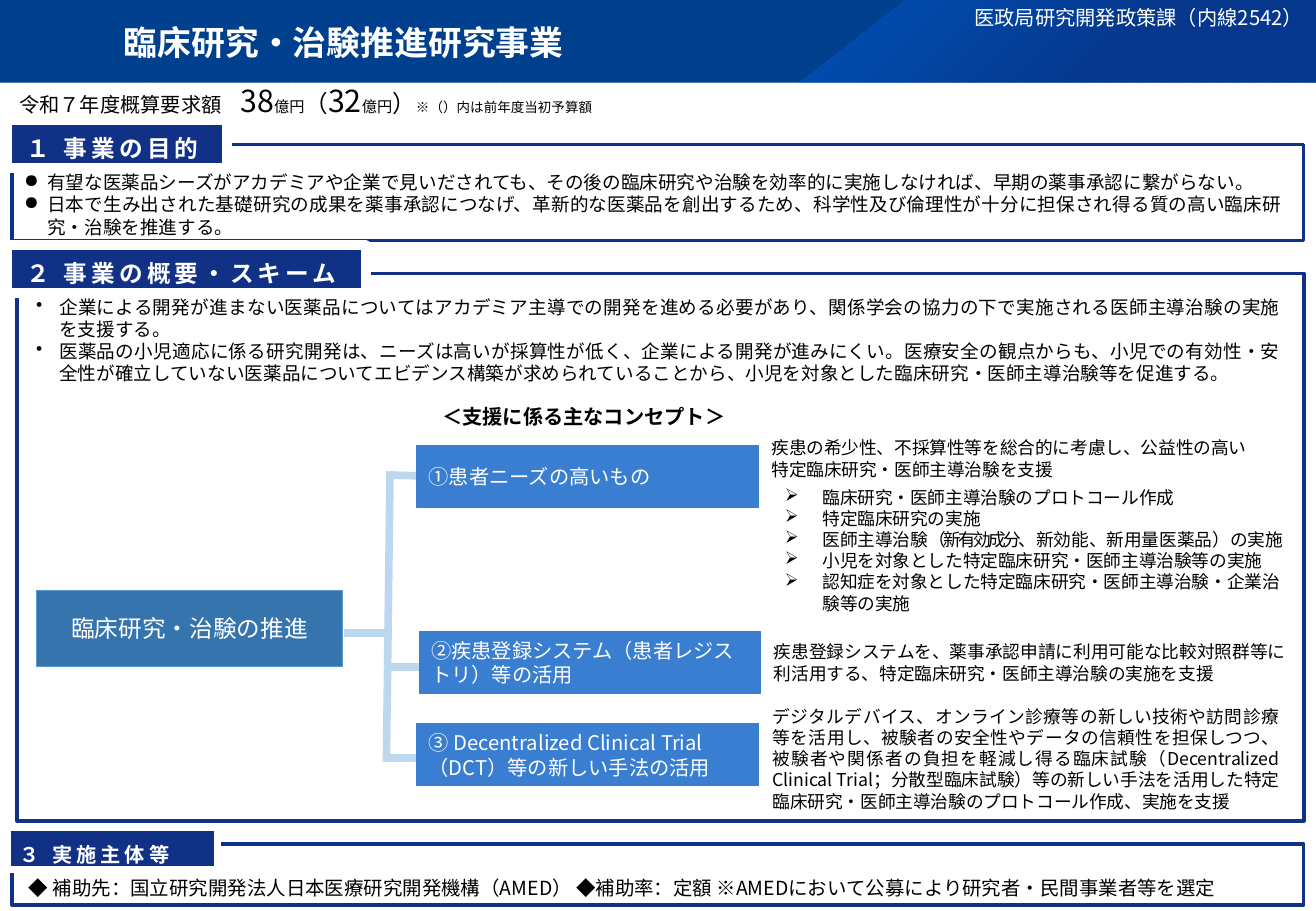
from lxml import etree
from pptx import Presentation
from pptx.dml.color import RGBColor
from pptx.enum.dml import MSO_PATTERN
from pptx.enum.shapes import MSO_CONNECTOR, MSO_SHAPE
from pptx.enum.text import MSO_ANCHOR as Anchor, MSO_AUTO_SIZE as AutoSize, PP_ALIGN as Align
from pptx.oxml import parse_xml
from pptx.oxml.ns import nsdecls, qn
from pptx.util import Inches, Pt

FONT = "Noto Sans CJK JP"
COLORS = {
    "white": "FFFFFF", "black": "000000", "navy": "103185",
    "band": "004292", "stripe": "003579", "glow": "0064DF", "deep": "0C338E",
    "goal": "3674AD", "goal_line": "5B9BD5", "concept": "397ED1", "branch": "BDD7EE",
}
TITLE = "臨床研究・治験推進研究事業"
DIVISION = "医政局研究開発政策課（内線2542）"
BUDGET = [
    ("令和７年度概算要求額", 12, 0), ("　", 11, 0), ("38", 18, 0), ("億円", 9, 0),
    ("（", 14, 0), ("32", 18, 0), ("億円", 9, 0), ("）", 14, 0),
    ("※", 8, -3), ("（", 8, 0), ("）", 8, -2.8), ("内は前年度当初予算額", 8, 0),
]
SECTIONS = [
    ("１ 事業の目的", (0.06, 0.99, 1.81, 0.39), (0.1, 1.19, 10.63, 0.79), 14, "Cabin", 6, (0.16, 0.04, 0.1, 0.04)),
    ("２ 事業の概要・スキーム", (0.06, 2.02, 2.95, 0.39), (0.14, 2.25, 10.59, 4.51), 14, "Cabin", 6, (0.16, 0.04, 0.1, 0.04)),
    ("３ 実施主体等", (0.06, 6.81, 1.73, 0.35), (0.1, 6.95, 10.63, 0.5), 12, FONT, 4.5, (0.1, 0.08, 0.1, 0.05)),
]
PURPOSE = [
    "有望な医薬品シーズがアカデミアや企業で見いだされても、その後の臨床研究や治験を効率的に実施しなければ、早期の薬事承認に繋がらない。",
    "日本で生み出された基礎研究の成果を薬事承認につなげ、革新的な医薬品を創出するため、科学性及び倫理性が十分に担保され得る質の高い臨床研究・治験を推進する。",
]
OUTLINE = [
    "企業による開発が進まない医薬品についてはアカデミア主導での開発を進める必要があり、関係学会の協力の下で実施される医師主導治験の実施を支援する。",
    "医薬品の小児適応に係る研究開発は、ニーズは高いが採算性が低く、企業による開発が進みにくい。医療安全の観点からも、小児での有効性・安全性が確立していない医薬品についてエビデンス構築が求められていることから、小児を対象とした臨床研究・医師主導治験等を促進する。",
]
ORGANIZATION = "◆ 補助先：国立研究開発法人日本医療研究開発機構（AMED） ◆補助率：定額 ※AMEDにおいて公募により研究者・民間事業者等を選定"
CONCEPT_HEADING = "＜支援に係る主なコンセプト＞"
GOAL = "臨床研究・治験の推進"
CONCEPTS = [
    ("①患者ニーズの高いもの", (3.43, 3.67)),
    ("②疾患登録システム（患者レジストリ）等の活用", (3.45, 5.2)),
    ("③ Decentralized Clinical Trial（DCT）等の新しい手法の活用", (3.43, 5.96)),
]
NEEDS = ["疾患の希少性、不採算性等を総合的に考慮し、公益性の高い", "特定臨床研究・医師主導治験を支援"]
NEEDS_ITEMS = [
    "臨床研究・医師主導治験のプロトコール作成",
    "特定臨床研究の実施",
    [("医師主導治験", 10.5, 0), ("（新有効成分、", 10.5, -1.5), ("新効能、新用量医薬品", 10.5, 0),
     ("）", 10.5, -1.5), ("の実施", 10.5, 0)],
    "小児を対象とした特定臨床研究・医師主導治験等の実施",
    "認知症を対象とした特定臨床研究・医師主導治験・企業治験等の実施",
]
REGISTRY = "疾患登録システムを、薬事承認申請に利用可能な比較対照群等に利活用する、特定臨床研究・医師主導治験の実施を支援"
NEW_METHODS = "デジタルデバイス、オンライン診療等の新しい技術や訪問診療等を活用し、被験者の安全性やデータの信頼性を担保しつつ、被験者や関係者の負担を軽減し得る臨床試験（Decentralized Clinical Trial；分散型臨床試験）等の新しい手法を活用した特定臨床研究・医師主導治験のプロトコール作成、実施を支援"
BRANCHES = [
    (3.5, 3.92, 3.21, 3.91), (3.21, 5.21, 2.83, 5.21), (3.18, 6.27, 3.21, 3.88),
    (3.5, 6.24, 3.16, 6.24), (3.45, 5.49, 3.18, 5.49),
]


def rgb(name):
    return RGBColor.from_string(COLORS[name])


def inches(values):
    return [Inches(value) for value in values]


def set_font(font, size, color, bold=False, spacing=0, name=FONT):
    font.name, font.size, font.bold = name, Pt(size), bold
    etree.SubElement(font._rPr, qn("a:ea")).set("typeface", FONT)
    font.color.rgb = rgb(color)
    if spacing:
        font._rPr.set("spc", str(int(spacing * 100)))


def write(frame, lines, size, color="black", align=Align.LEFT, bullet=None, indent=(0.19, -0.19), **style):
    written = []
    for line in lines:
        paragraph = frame.add_paragraph() if frame.text else frame.paragraphs[0]
        paragraph.alignment = align
        if bullet:
            properties = paragraph._p.get_or_add_pPr()
            properties.set("marL", str(Inches(indent[0])))
            properties.set("indent", str(Inches(indent[1])))
            etree.SubElement(properties, qn("a:buChar")).set("char", bullet)
        if isinstance(line, str):
            paragraph.add_run().text = line
            set_font(paragraph.font, size, color, **style)
        else:
            for text, run_size, spacing in line:
                run = paragraph.add_run()
                run.text = text
                set_font(run.font, run_size, color, spacing=spacing)
        written.append(paragraph)
    return written


def set_margins(frame, margins):
    frame.margin_left, frame.margin_top, frame.margin_right, frame.margin_bottom = inches(margins)


def add_text(slide, box, lines, size, anchor=Anchor.TOP, **style):
    frame = slide.shapes.add_textbox(*inches(box)).text_frame
    frame.word_wrap, frame.vertical_anchor = True, anchor
    write(frame, lines, size, **style)
    return frame


def add_box(slide, box, fill=None, line=None, width=0.5):
    shape = slide.shapes.add_shape(MSO_SHAPE.RECTANGLE, *inches(box))
    shape.shadow.inherit = False
    if fill:
        shape.fill.solid()
        shape.fill.fore_color.rgb = rgb(fill)
    else:
        shape.fill.background()
    if line:
        shape.line.color.rgb = rgb(line)
        shape.line.width = Pt(width)
    else:
        shape.line.fill.background()
    shape.text_frame.word_wrap = True
    return shape


def add_header(slide):
    band = add_box(slide, (-0.01, -0.03, 10.85, 0.71))
    band.fill.patterned()
    band.fill.pattern = MSO_PATTERN.DARK_UPWARD_DIAGONAL
    band.fill.fore_color.rgb, band.fill.back_color.rgb = rgb("stripe"), rgb("band")

    builder = slide.shapes.build_freeform(Inches(7.48), Inches(-0.03))
    builder.add_line_segments([inches(point) for point in [(10.84, -0.03), (10.84, 0.68), (6.57, 0.68)]])
    wedge = builder.convert_to_shape()
    wedge.shadow.inherit = False
    wedge.line.fill.background()
    wedge.fill.background()
    stops = "".join(
        f'<a:gs pos="{position}"><a:srgbClr val="{COLORS[color]}"><a:alpha val="{alpha}"/></a:srgbClr></a:gs>'
        for position, color, alpha in [(0, "glow", 50000), (62000, "deep", 55000)])
    gradient = parse_xml(
        f'<a:gradFill {nsdecls("a")} rotWithShape="1"><a:gsLst>{stops}</a:gsLst>'
        '<a:path path="circle"><a:fillToRect r="100000" b="100000"/></a:path></a:gradFill>')
    properties = wedge._element.spPr
    properties.replace(properties.find(qn("a:noFill")), gradient)

    title = slide.shapes.title
    slide.shapes._spTree.append(title._element)
    title.left, title.top, title.width, title.height = inches((0.92, 0.13, 8.05, 0.44))
    title.text_frame.auto_size = AutoSize.NONE
    title.text_frame.vertical_anchor = Anchor.TOP
    write(title.text_frame, [TITLE], 20, "white", bold=True)

    division = add_text(slide, (7.94, 0, 2.99, 0.68), [DIVISION], 12, color="white")
    set_margins(division, (0.08, 0.04, 0.08, 0.04))
    budget = add_text(slide, (0.06, 0.72, 6.61, 0.33), [BUDGET], 12)
    budget.paragraphs[0].line_spacing = Pt(15)


def add_sections(slide):
    for heading, label_box, frame_box, size, font, border, margins in SECTIONS:
        add_box(slide, frame_box, line="navy", width=2)
        label = add_box(slide, label_box, "navy", "white", border).text_frame
        set_margins(label, margins)
        paragraph, = write(label, [heading], size, "white", bold=True, spacing=2.4, name=font)
        paragraph.line_spacing, paragraph.space_after = 1.3, Pt(8)
    add_text(slide, (0.1, 1.36, 10.55, 0.66), PURPOSE, 11, align=Align.JUSTIFY, bullet="●")
    add_text(slide, (0.2, 2.33, 10.44, 0.94), OUTLINE, 11, Anchor.MIDDLE, align=Align.JUSTIFY, bullet="•")
    add_text(slide, (0.14, 7.16, 10.51, 0.29), [ORGANIZATION], 11.5)


def add_scheme(slide):
    for branch in BRANCHES:
        connector = slide.shapes.add_connector(MSO_CONNECTOR.STRAIGHT, *inches(branch))
        connector.line.color.rgb = rgb("branch")
        connector.line.width = Pt(4.5)
        etree.SubElement(connector._element.spPr, qn("a:effectLst"))
    goal = add_box(slide, (0.3, 4.86, 2.52, 0.63), "goal", "goal_line")
    write(goal.text_frame, [GOAL], 14, "white", Align.CENTER)
    for text, corner in CONCEPTS:
        concept = add_box(slide, (*corner, 2.81, 0.51), "concept", "concept")
        write(concept.text_frame, [text], 12, "white")
    add_text(slide, (3.54, 3.28, 2.98, 0.3), [CONCEPT_HEADING], 12, bold=True)
    needs = add_text(slide, (6.25, 3.55, 4.41, 1.57), NEEDS, 10.5)
    items = write(needs, NEEDS_ITEMS, 10.5, bullet="➢", indent=(0.42, -0.31))
    items[0].space_before = Pt(4)
    add_text(slide, (6.27, 5.23, 4.41, 0.45), [REGISTRY], 10.5, align=Align.JUSTIFY)
    add_text(slide, (6.26, 5.76, 4.37, 0.98), [NEW_METHODS], 10.5, align=Align.JUSTIFY)


def main():
    presentation = Presentation()
    presentation.slide_width, presentation.slide_height = inches((10.83, 7.5))
    slide = presentation.slides.add_slide(presentation.slide_layouts[5])
    add_header(slide)
    add_sections(slide)
    add_scheme(slide)
    presentation.save("out.pptx")


if __name__ == "__main__":
    main()
